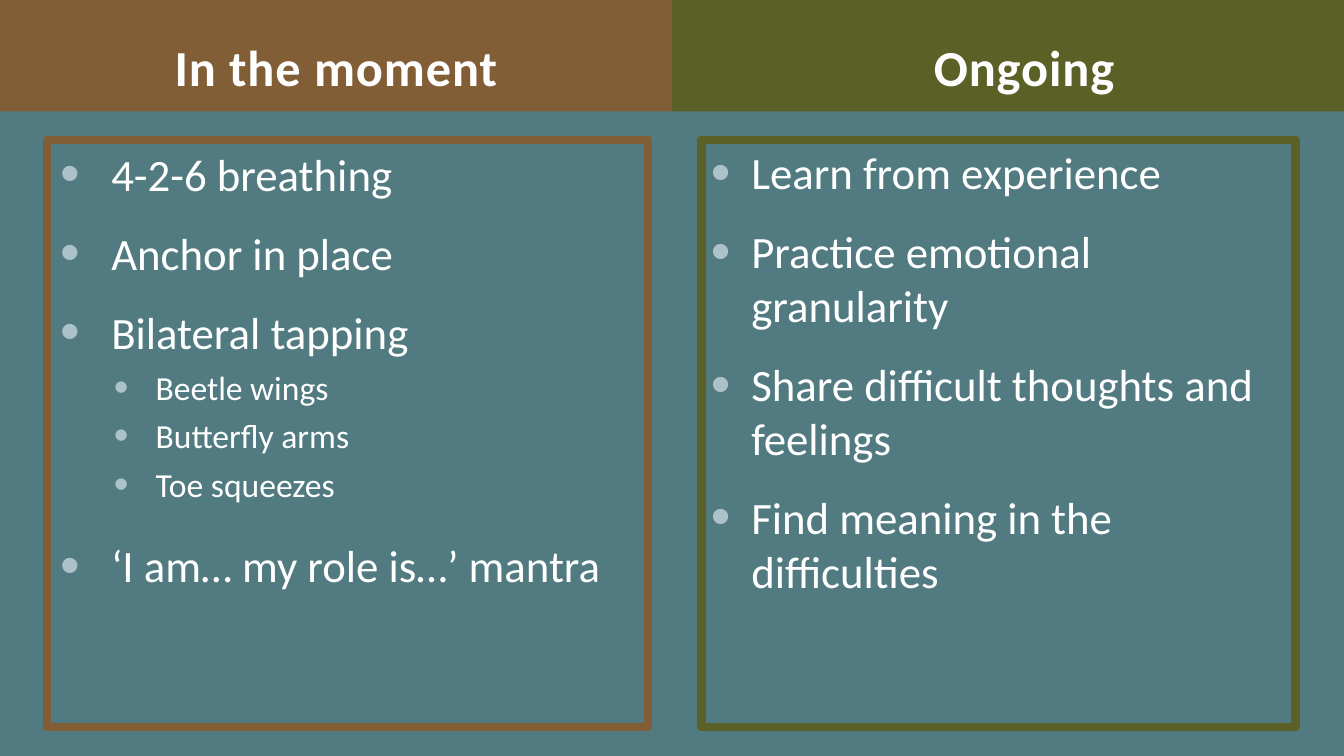
from lxml.etree import SubElement
from pptx import Presentation
from pptx.dml.color import RGBColor
from pptx.enum.shapes import MSO_SHAPE
from pptx.enum.text import MSO_ANCHOR, PP_ALIGN
from pptx.oxml.ns import qn
from pptx.util import Inches, Pt


def color(hex_string):
    return RGBColor.from_string(hex_string)


def add_bullet(paragraph, indent, hanging):
    props = paragraph._p.get_or_add_pPr()
    props.set("marL", str(Inches(indent)))
    props.set("indent", str(-Inches(hanging)))
    bullet_color = SubElement(props, qn("a:buClr"))
    SubElement(bullet_color, qn("a:srgbClr"), val="ACC2C9")
    SubElement(props, qn("a:buSzPct"), val="125000")
    SubElement(props, qn("a:buFont"), typeface="Arial")
    SubElement(props, qn("a:buChar"), char="•")


# Each point: text, level, space before, space after
in_the_moment = [
    ("4-2-6 breathing", 0, 0, 13.5),
    ("Anchor in place", 0, 0, 13.5),
    ("Bilateral tapping", 0, 0, 4.5),
    ("Beetle wings", 1, 0, 4.5),
    ("Butterfly arms", 1, 0, 4.5),
    ("Toe squeezes", 1, 0, 4.5),
    ("‘I am… my role is…’ mantra", 0, 13.5, 13.5),
]
ongoing = [
    ("Learn from experience", 0, 0, 13.5),
    ("Practice emotional granularity", 0, 0, 13.5),
    ("Share difficult thoughts and feelings", 0, 0, 13.5),
    ("Find meaning in the difficulties", 0, 0, 13.5),
]

# Heading, points, colour, band left, heading left, frame left and width,
# frame side and top margins, first-level indent
columns = [
    ("In the moment", in_the_moment, "825E37", 0, 1.14, 0.35, 4.47, 0.1, 0.05, 0.38),
    ("Ongoing", ongoing, "5B6027", 5, 6.26, 5.22, 4.42, 0.07, 0.04, 0.3),
]

prs = Presentation()
prs.slide_width = Inches(10)
prs.slide_height = Inches(10) * 9 // 16
slide = prs.slides.add_slide(prs.slide_layouts[6])
slide.background.fill.solid()
slide.background.fill.fore_color.rgb = color("517B80")

for (heading, points, accent, band_left, heading_left, frame_left, frame_width,
     side_margin, top_margin, first_indent) in columns:
    band = slide.shapes.add_shape(
        MSO_SHAPE.RECTANGLE, Inches(band_left), 0, Inches(5), Inches(0.83))
    band.shadow.inherit = False
    band.fill.solid()
    band.fill.fore_color.rgb = color(accent)
    band.line.fill.background()

    label = slide.shapes.add_textbox(
        Inches(heading_left), Inches(0.02), Inches(2.72), Inches(0.74))
    if heading == "In the moment":
        label.fill.solid()
        label.fill.fore_color.rgb = color(accent)
    title = label.text_frame
    title.word_wrap = True
    title.vertical_anchor = MSO_ANCHOR.BOTTOM
    title.margin_left = title.margin_right = Inches(0.07)
    title.margin_top = title.margin_bottom = Inches(0.04)
    title.text = heading
    title.paragraphs[0].alignment = PP_ALIGN.CENTER
    heading_run = title.paragraphs[0].runs[0]
    heading_run.font.name = "Calibri"
    heading_run.font.size = Pt(27)
    heading_run.font.bold = True
    heading_run.font.color.rgb = color("FEFEFE")
    heading_run._r.get_or_add_rPr().set("spc", "50")

    frame = slide.shapes.add_shape(
        MSO_SHAPE.RECTANGLE, Inches(frame_left), Inches(1.04),
        Inches(frame_width), Inches(4.37))
    frame.shadow.inherit = False
    frame.fill.background()
    frame.line.color.rgb = color(accent)
    frame.line.width = Pt(4.5)

    body = frame.text_frame
    body.word_wrap = True
    body.vertical_anchor = MSO_ANCHOR.TOP
    body.margin_left = body.margin_right = Inches(side_margin)
    body.margin_top = body.margin_bottom = Inches(top_margin)
    body.text = "\n".join(point[0] for point in points)
    for paragraph, (_, level, before, after) in zip(body.paragraphs, points):
        if level:
            add_bullet(paragraph, 0.71, 0.31)
        else:
            add_bullet(paragraph, first_indent, first_indent)
        paragraph.level = level
        paragraph.alignment = PP_ALIGN.LEFT
        paragraph.space_before = Pt(before)
        paragraph.space_after = Pt(after)
        font = paragraph.runs[0].font
        font.name = "Calibri"
        font.size = Pt(18 if level else 24)
        font.color.rgb = color("FFFFFF")

prs.save("out.pptx")
